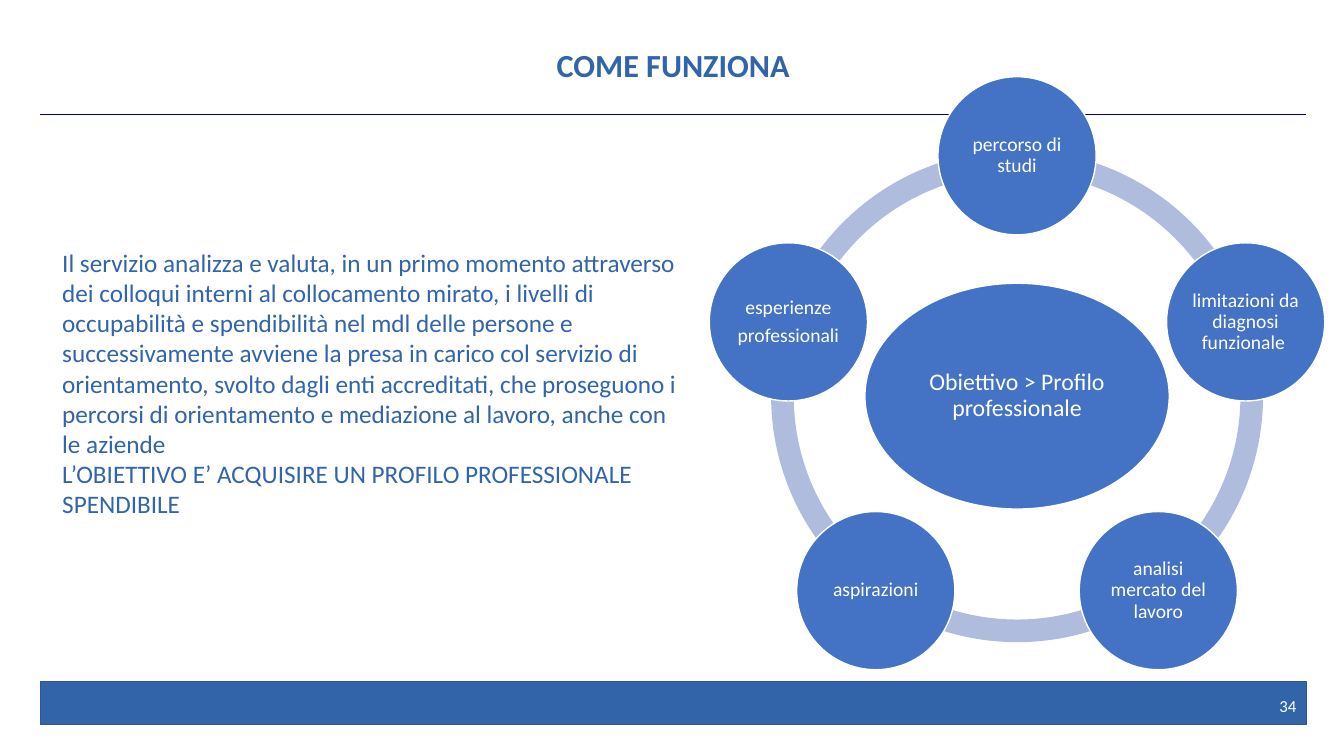
from math import cos, radians, sin

from lxml.etree import SubElement
from pptx import Presentation
from pptx.dml.color import RGBColor
from pptx.enum.shapes import MSO_CONNECTOR, MSO_SHAPE
from pptx.enum.text import MSO_ANCHOR, MSO_AUTO_SIZE, PP_ALIGN
from pptx.oxml.ns import qn
from pptx.util import Pt

COLORS = {
    "brand": "3264AA",
    "bar_edge": "325491",
    "rule": "02008B",
    "node": "4472C4",
    "arc": "B0BCDE",
    "white": "FFFFFF",
}

# Layout in points
MARGIN, CONTENT_WIDTH = 28.8, 904.32
RING_CENTER = (726.5, 283)
RING_SIZE = 351.4
NODE_ORBIT = 171.7
NODE_SIZE = 113
HUB_SIZE = (217.4, 161.3)
NODE_STEP = 72
ARC_THICKNESS = 0.046
ARC_UNITS_PER_DEGREE = 0.6  # adjustment value of one degree

# Clockwise from the top; each node is a list of paragraphs
NODES = [
    ["percorso di studi"],
    ["limitazioni da diagnosi funzionale "],
    ["analisi mercato del lavoro"],
    ["aspirazioni"],
    ["esperienze", "professionali"],
]
HUB = ["Obiettivo > Profilo professionale"]
DESCRIPTION = [
    "Il servizio analizza e valuta, in un primo momento attraverso dei colloqui "
    "interni al collocamento mirato, i livelli di occupabilità e spendibilità nel "
    "mdl delle persone e successivamente avviene la presa in carico col servizio "
    "di orientamento, svolto dagli enti accreditati, che proseguono i percorsi di "
    "orientamento e mediazione al lavoro, anche con le aziende",
    "L’OBIETTIVO E’ ACQUISIRE UN PROFILO PROFESSIONALE SPENDIBILE",
]

CIRCLE_FRAME = {
    "word_wrap": True,
    "vertical_anchor": MSO_ANCHOR.MIDDLE,
    **{f"margin_{side}": Pt(1.5) for side in ("left", "top", "right", "bottom")},
}


def color(name):
    return RGBColor.from_string(COLORS[name])


def apply_format(target, values):
    for attribute, value in values.items():
        setattr(target, attribute, value)


def format_paragraph(paragraph, size, color_name, bold=False, **layout):
    apply_format(paragraph, layout)
    apply_format(paragraph.font, {"name": "Calibri", "size": Pt(size), "bold": bold})
    paragraph.font.color.rgb = color(color_name)


def add_filled_shape(slide, preset, box, fill, edge=None):
    shape = slide.shapes.add_shape(preset, *map(Pt, box))
    shape.shadow.inherit = False
    shape.fill.solid()
    shape.fill.fore_color.rgb = color(fill)
    if edge:
        shape.line.color.rgb = color(edge)
        shape.line.width = Pt(1)
    else:
        shape.line.fill.background()
    return shape


def add_rule(slide, top):
    rule = slide.shapes.add_connector(
        MSO_CONNECTOR.STRAIGHT,
        *map(Pt, (MARGIN, top, MARGIN + CONTENT_WIDTH, top)))
    rule.line.color.rgb = color("rule")
    rule.line.width = Pt(1)
    SubElement(rule.element.spPr, qn("a:effectLst"))


def add_title(slide, text):
    title = slide.shapes.title
    apply_format(title, {"left": Pt(MARGIN), "top": Pt(24.5),
                         "width": Pt(CONTENT_WIDTH), "height": Pt(46.8)})
    apply_format(title.text_frame, {"text": text, "word_wrap": True,
                                    "auto_size": MSO_AUTO_SIZE.NONE,
                                    "vertical_anchor": MSO_ANCHOR.MIDDLE})
    format_paragraph(title.text_frame.paragraphs[0], 23, "brand", bold=True,
                     alignment=PP_ALIGN.CENTER, line_spacing=0.9)


def add_text(slide, box, lines, size, color_name, alignment, frame_format):
    frame = slide.shapes.add_textbox(*map(Pt, box)).text_frame
    apply_format(frame, {"word_wrap": True, **frame_format})
    paragraph = frame.paragraphs[0]
    for index, line in enumerate(lines):
        if index:
            paragraph.add_line_break()
        paragraph.add_run().text = line
    format_paragraph(paragraph, size, color_name, alignment=alignment)


def add_arc(slide, start, end):
    left, top = (center - RING_SIZE / 2 for center in RING_CENTER)
    arc = add_filled_shape(slide, MSO_SHAPE.BLOCK_ARC,
                           (left, top, RING_SIZE, RING_SIZE), "arc")
    arc.adjustments[0] = start % 360 * ARC_UNITS_PER_DEGREE
    arc.adjustments[1] = end % 360 * ARC_UNITS_PER_DEGREE
    arc.adjustments[2] = ARC_THICKNESS


def add_circle(slide, center, dimensions, paragraphs, size):
    corner = [middle - length / 2 for middle, length in zip(center, dimensions)]
    circle = add_filled_shape(slide, MSO_SHAPE.OVAL, (*corner, *dimensions),
                              "node", "white")
    frame = circle.text_frame
    frame.text = "\n".join(paragraphs)
    apply_format(frame, CIRCLE_FRAME)
    for paragraph in frame.paragraphs:
        format_paragraph(paragraph, size, "white", alignment=PP_ALIGN.CENTER,
                         line_spacing=0.9, space_after=Pt(0.35 * size))


def add_cycle(slide):
    angles = [-90 + NODE_STEP * index for index in range(len(NODES))]
    for angle in angles:
        add_arc(slide, angle, angle + NODE_STEP)
    add_circle(slide, RING_CENTER, HUB_SIZE, HUB, 17)
    for angle, paragraphs in zip(angles, NODES):
        center = (RING_CENTER[0] + NODE_ORBIT * cos(radians(angle)),
                  RING_CENTER[1] + NODE_ORBIT * sin(radians(angle)))
        add_circle(slide, center, (NODE_SIZE, NODE_SIZE), paragraphs, 14)


def main():
    presentation = Presentation()
    presentation.slide_width, presentation.slide_height = Pt(960), Pt(540)
    slide = presentation.slides.add_slide(presentation.slide_layouts[5])

    # Header and footer
    add_filled_shape(slide, MSO_SHAPE.RECTANGLE,
                     (MARGIN, 486.7, CONTENT_WIDTH, 31), "brand", "bar_edge")
    add_rule(slide, 82)
    add_title(slide, "COME FUNZIONA")
    add_text(slide, (846.7, 489.6, 86.4, 28.8), ["34"], 12, "white",
             PP_ALIGN.RIGHT, {"vertical_anchor": MSO_ANCHOR.MIDDLE})

    # Cycle of inputs around the goal
    add_cycle(slide)

    # Description
    add_text(slide, (37.4, 172.8, 456.5, 203.8), DESCRIPTION, 18, "brand",
             PP_ALIGN.LEFT, {"auto_size": MSO_AUTO_SIZE.SHAPE_TO_FIT_TEXT})

    presentation.save("out.pptx")


if __name__ == "__main__":
    main()
